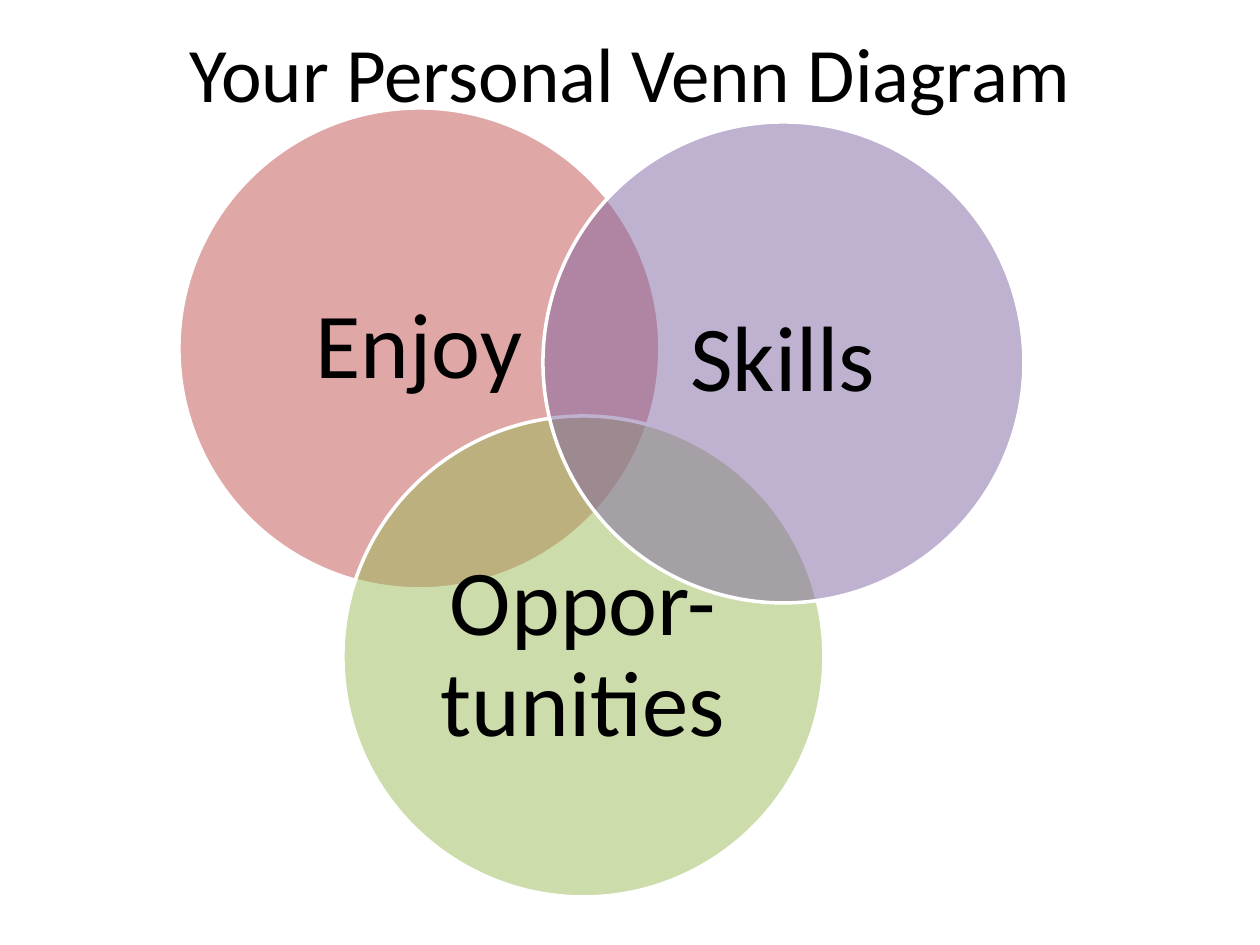
import pptx
import pptx.dml.color
import pptx.enum.shapes
import pptx.enum.text
import pptx.oxml
import pptx.oxml.ns
import pptx.util

EMU_PER_PX = 914400 // 126
FONT = "Calibri"
COLORS = {
    "text": "000000",
    "outline": "FFFFFF",
    "enjoy": "C0504D",
    "opportunities": "9BBB59",
    "skills": "8064A2",
}
DIAMETER = 481
LABEL_SIDE = 340  # square inscribed in a circle
LABEL_INSET = 24

# label, color name, left, top; from back to front
CIRCLES = [
    ("Enjoy", "enjoy", 179, 108),
    ("Oppor-tunities", "opportunities", 343, 416),
    ("Skills", "skills", 543, 122),
]


def px(*lengths):
    return [pptx.util.Emu(length * EMU_PER_PX) for length in lengths]


def color(name):
    return pptx.dml.color.RGBColor.from_string(COLORS[name])


def add_text(page, text, left, top, width, height, size, inset):
    """Add a centred text box and return its paragraph."""
    box = page.shapes.add_textbox(*px(left, top, width, height))
    frame = box.text_frame
    frame.word_wrap = True
    frame.vertical_anchor = pptx.enum.text.MSO_ANCHOR.MIDDLE
    (frame.margin_left, frame.margin_top,
     frame.margin_right, frame.margin_bottom) = px(*[inset] * 4)
    para = frame.paragraphs[0]
    para.alignment = pptx.enum.text.PP_ALIGN.CENTER
    span = para.add_run()
    span.text = text
    span.font.name = FONT
    span.font.size = pptx.util.Pt(size)
    span.font.color.rgb = color("text")
    return para


def set_half_transparent(shape):
    fill_color = shape.fill._xPr.find(".//" + pptx.oxml.ns.qn("a:srgbClr"))
    fill_color.append(pptx.oxml.parse_xml(
        f'<a:alpha {pptx.oxml.ns.nsdecls("a")} val="50000"/>'))


def add_circle(page, label, color_name, left, top):
    circle = page.shapes.add_shape(
        pptx.enum.shapes.MSO_SHAPE.OVAL, *px(left, top, DIAMETER, DIAMETER))
    circle.shadow.inherit = False
    circle.fill.solid()
    circle.fill.fore_color.rgb = color(color_name)
    set_half_transparent(circle)
    circle.line.color.rgb = color("outline")
    circle.line.width = pptx.util.Pt(2)

    offset = (DIAMETER - LABEL_SIDE) // 2
    para = add_text(page, label, left + offset, top + offset,
                    LABEL_SIDE, LABEL_SIDE, 53, LABEL_INSET)
    para.line_spacing = 0.9
    para.space_after = pptx.util.Pt(19)


def main():
    deck = pptx.Presentation()
    deck.slide_width, deck.slide_height = px(1260, 945)
    page = deck.slides.add_slide(deck.slide_layouts[6])
    add_text(page, "Your Personal Venn Diagram", 63, -52, 1134, 248, 44, 6)
    for circle in CIRCLES:
        add_circle(page, *circle)
    deck.save("out.pptx")


if __name__ == "__main__":
    main()
